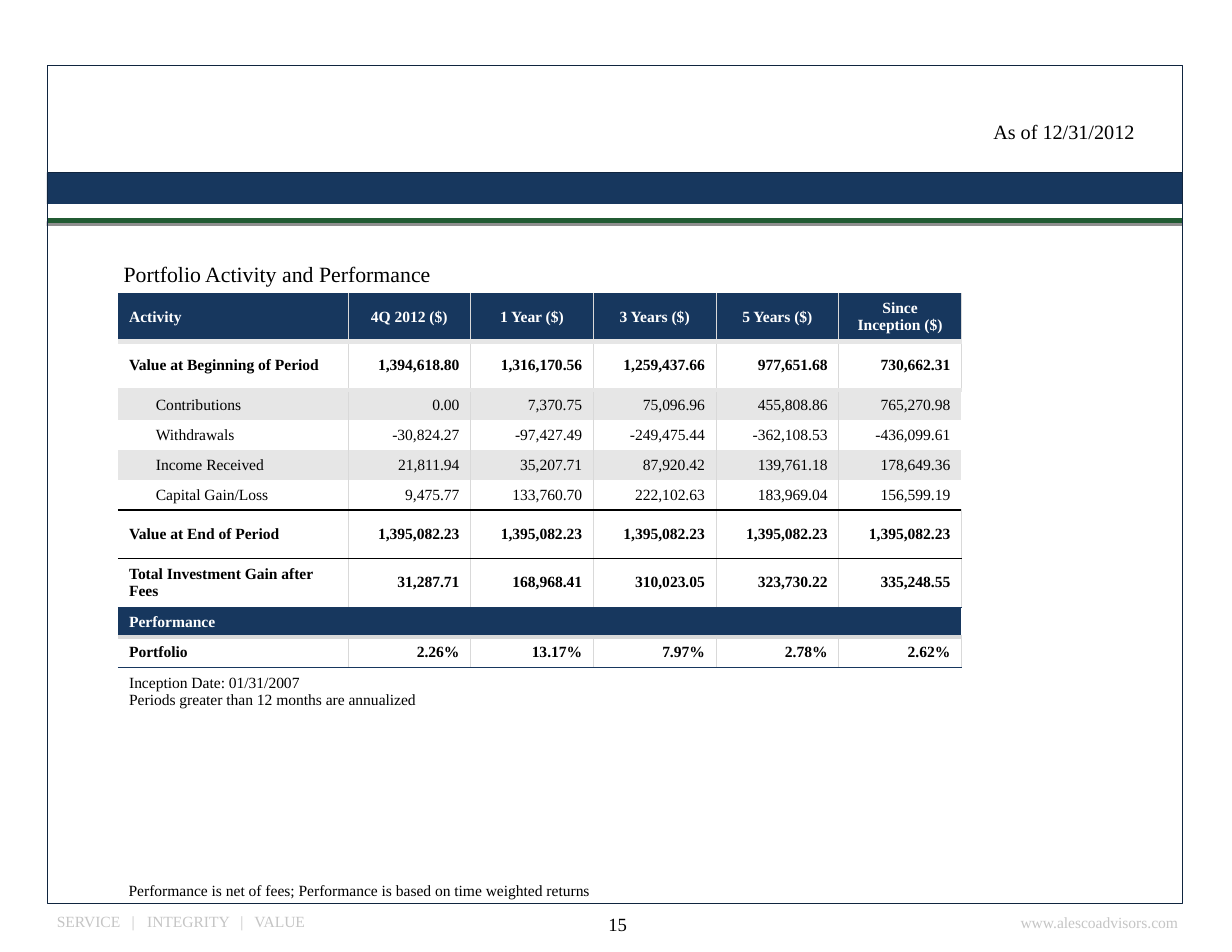
from lxml.etree import SubElement as Sub
from pptx import Presentation
from pptx.dml.color import RGBColor
from pptx.enum.shapes import MSO_CONNECTOR as Link, MSO_SHAPE as Kind
from pptx.enum.text import MSO_ANCHOR as Anchor, PP_ALIGN as Align
from pptx.oxml.ns import qn
from pptx.util import Pt

FONT = "Times New Roman"
NAVY, INK, GREEN = "17375E", "10253F", "215B33"
WHITE, BLACK, PALE, RULE, FAINT = "FFFFFF", "000000", "E6E6E6", "D9D9D9", "C5C5C5"
LEFT, WIDE = 30.2, 730.1
PLAIN = "{2D5ABB26-0587-4C30-8999-92F81FD0307C}"  # table style without grid
COLS = [16.9, 130.6] + [78.9] * 5
LOW, TALL = 19.3, 31.2

TITLE = "Portfolio Activity and Performance"
HEADS = ["4Q 2012 ($)", "1 Year ($)", "3 Years ($)", "5 Years ($)", "Since Inception ($)"]
START = ["1,394,618.80", "1,316,170.56", "1,259,437.66", "977,651.68", "730,662.31"]
FLOWS = {
    "Contributions": ["0.00", "7,370.75", "75,096.96", "455,808.86", "765,270.98"],
    "Withdrawals": ["-30,824.27", "-97,427.49", "-249,475.44", "-362,108.53", "-436,099.61"],
    "Income Received": ["21,811.94", "35,207.71", "87,920.42", "139,761.18", "178,649.36"],
    "Capital Gain/Loss": ["9,475.77", "133,760.70", "222,102.63", "183,969.04", "156,599.19"],
}
GAIN = ["31,287.71", "168,968.41", "310,023.05", "323,730.22", "335,248.55"]
RATES = ["2.26%", "13.17%", "7.97%", "2.78%", "2.62%"]
NOTES = "Inception Date: 01/31/2007\nPeriods greater than 12 months are annualized"


def color(code):
    return RGBColor.from_string(code)


def write(frame, text, size=10, ink=BLACK, bold=False, align=Align.LEFT, tabs=()):
    """Fill a text frame, one paragraph per line, with tab stops in points."""
    frame.word_wrap = True
    for i, line in enumerate(text.split("\n")):
        para = frame.paragraphs[0] if i == 0 else frame.add_paragraph()
        if tabs:
            stops = Sub(para._p.get_or_add_pPr(), qn("a:tabLst"))
            for pos in tabs:
                Sub(stops, qn("a:tab"), pos=str(Pt(pos)), algn="l")
        para.alignment = align
        if not line:
            Sub(para._p, qn("a:endParaRPr"), sz=str(size * 100))
            continue
        run = para.add_run()
        run.text = line
        font = run.font
        font.name, font.size, font.bold = FONT, Pt(size), bold
        font.color.rgb = color(ink)


def label(slide, text, x, y, w, h, **form):
    box = slide.shapes.add_textbox(Pt(x), Pt(y), Pt(w), Pt(h))
    write(box.text_frame, text, **form)


def block(slide, y, h, line, fill=None):
    box = slide.shapes.add_shape(Kind.RECTANGLE, Pt(LEFT), Pt(y), Pt(WIDE), Pt(h))
    box.shadow.inherit = False
    if fill:
        box.fill.solid()
        box.fill.fore_color.rgb = color(fill)
    else:
        box.fill.background()
    box.line.color.rgb = color(line)
    box.line.width = Pt(0.5)


def stripe(slide, y):
    """Draw the green rule with its hard shadow."""
    line = slide.shapes.add_connector(Link.STRAIGHT, Pt(LEFT), Pt(y), Pt(LEFT + WIDE), Pt(y))
    line.line.color.rgb = color(GREEN)
    line.line.width = Pt(3)
    effects = Sub(line._element.spPr, qn("a:effectLst"))
    shade = Sub(effects, qn("a:outerShdw"), blurRad="0", dist=str(Pt(2)),
                dir=str(98 * 60000), algn="ctr", rotWithShape="0")
    tone = Sub(shade, qn("a:srgbClr"), val=BLACK)
    Sub(tone, qn("a:alpha"), val="43000")


def border(cell, side, code, width):
    line = Sub(cell._tc.get_or_add_tcPr(), qn("a:ln" + side), w=str(Pt(width)))
    Sub(Sub(line, qn("a:solidFill")), qn("a:srgbClr"), val=code)


def paint(cell, fill, edges):
    """Set borders, then fill; edges maps sides in L, R, T, B order."""
    for side, edge in edges.items():
        if edge:
            border(cell, side, *edge)
    cell.fill.solid()
    cell.fill.fore_color.rgb = color(fill)
    cell.vertical_anchor = Anchor.MIDDLE


def plan():
    """List the rows: height, texts, merged columns, fill, edge below, format."""
    dark = {"bold": True, "ink": WHITE}
    bold = {"bold": True}
    heavy, thin = (BLACK, 1), (NAVY, 0.5)
    rows = [
        (23.6, [TITLE], 7, WHITE, None, {"size": 14}),
        (TALL, ["Activity"] + HEADS, 2, NAVY, (PALE, 3), dark),
        (TALL, ["Value at Beginning of Period"] + START, 2, WHITE, None, bold),
    ]
    for i, (name, flow) in enumerate(FLOWS.items()):
        last = i == len(FLOWS) - 1
        rows.append((LOW, ["", name] + flow, 1, WHITE if i % 2 else PALE,
                     heavy if last else None, {}))
    return rows + [
        (TALL, ["Value at End of Period"] + ["1,395,082.23"] * 5, 2, WHITE, heavy, bold),
        (TALL, ["Total Investment Gain after Fees"] + GAIN, 2, WHITE, thin, bold),
        (LOW, ["Performance"], 7, NAVY, (RULE, 3), dark),
        (LOW, ["Portfolio"] + RATES, 2, WHITE, thin, bold),
        (TALL, [NOTES], 7, WHITE, None, {}),
    ]


def report(slide):
    rows = plan()
    shape = slide.shapes.add_table(len(rows), len(COLS), Pt(75.8), Pt(164.2),
                                   Pt(sum(COLS)), Pt(sum(r[0] for r in rows)))
    grid = shape.table
    grid.first_row = grid.horz_banding = False
    grid._tbl.tblPr.find(qn("a:tableStyleId")).text = PLAIN
    for col, width in zip(grid.columns, COLS):
        col.width = Pt(width)
    above = None
    for r, (high, texts, span, fill, below, form) in enumerate(rows):
        grid.rows[r].height = Pt(high)
        if span > 1:
            grid.cell(r, 0).merge(grid.cell(r, span - 1))
        texts = texts[:1] + [""] * (span - 1) + texts[1:]
        side = Align.CENTER if "Activity" in texts else Align.RIGHT
        for c, text in enumerate(texts):
            cell = grid.cell(r, c)
            end = c + span - 1 if c == 0 else c
            rule = (RULE, 0.5)
            paint(cell, fill, {"L": rule if c > 1 and span < 7 else None,
                               "R": rule if 0 < end < 6 else None,
                               "T": above, "B": below})
            write(cell.text_frame, text, align=side if c > 1 else Align.LEFT, **form)
        above = below
    head = grid.cell(0, 0)
    head.margin_left = Pt(3.6)
    head.vertical_anchor = Anchor.BOTTOM


def main():
    deck = Presentation()
    deck.slide_width, deck.slide_height = Pt(792), Pt(612)
    slide = deck.slides.add_slide(deck.slide_layouts[6])
    block(slide, 110.9, 20.2, NAVY, NAVY)
    stripe(slide, 141.8)
    block(slide, 41.8, 539.3, INK)
    block(slide, 41.8, 69.1, INK, WHITE)
    label(slide, "As of 12/31/2012", 462, 73.4, 274.3, 23, size=13, align=Align.RIGHT)
    label(slide, "15", 304.6, 583.2, 185, 32.4, size=12, align=Align.CENTER)
    label(slide, "www.alescoadvisors.com", 649, 583.2, 120, 19.4, ink=FAINT)
    label(slide, "SERVICE\t|\tINTEGRITY\t|\tVALUE", 29.5, 582.5, 177, 19.4,
          ink=FAINT, tabs=(48, 58, 118, 127))
    report(slide)
    label(slide, "Performance is net of fees; Performance is based on time weighted returns",
          75.6, 563, 370, 19.4)
    deck.save("out.pptx")


if __name__ == "__main__":
    main()
